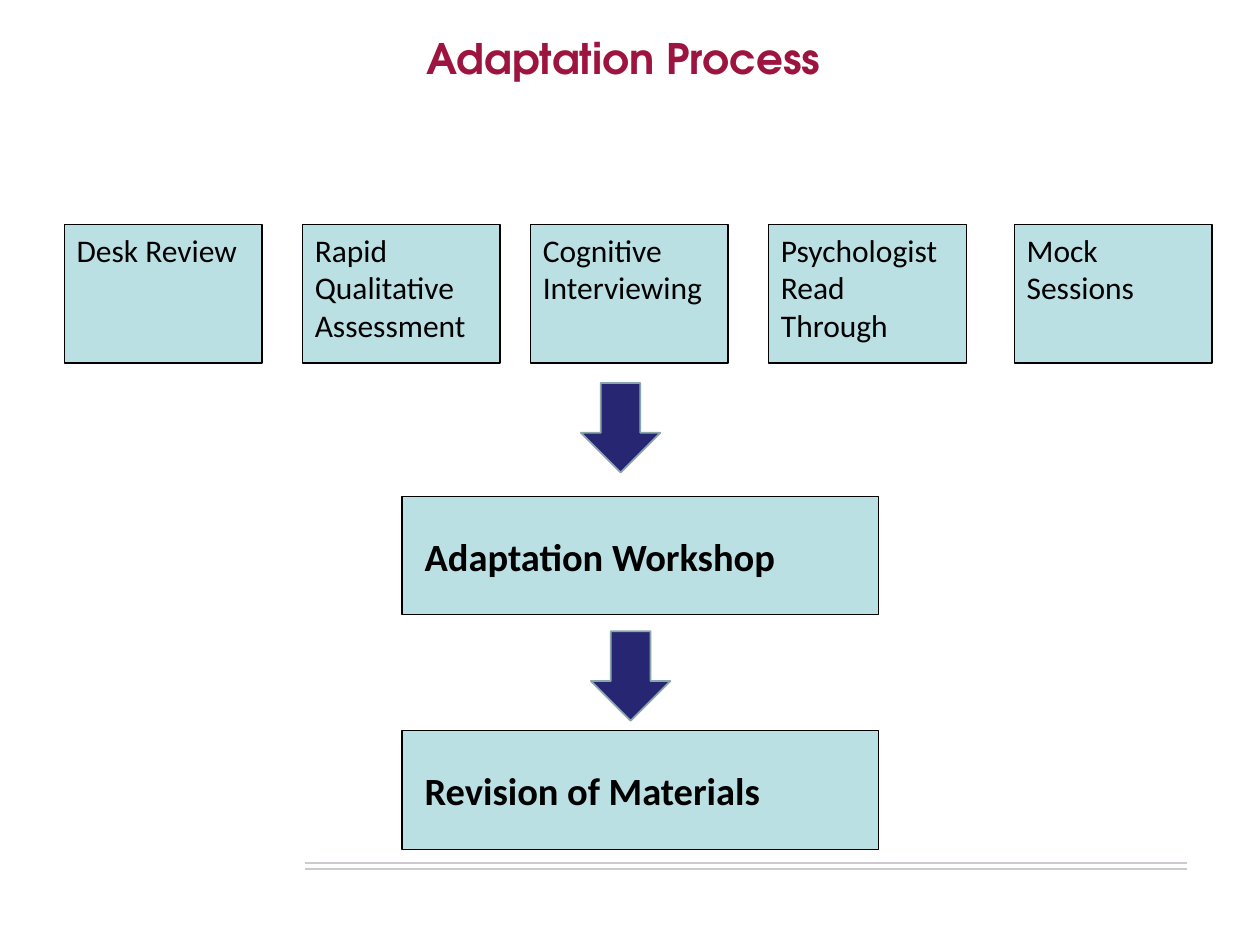
from dataclasses import dataclass

import pptx
import pptx.dml.color
import pptx.enum.shapes
import pptx.enum.text
import pptx.oxml
import pptx.util

Pt = pptx.util.Pt
RGB = pptx.dml.color.RGBColor.from_string
SHAPE = pptx.enum.shapes.MSO_SHAPE
ANCHOR = pptx.enum.text.MSO_ANCHOR
ALIGN = pptx.enum.text.PP_ALIGN


@dataclass(frozen=True)
class Theme:
    title: str = "9E1440"
    text: str = "000000"
    box: str = "BBE0E3"
    arrow: str = "262673"
    arrow_line: str = "8AA6A8"
    rule: str = "CEC9CE"
    title_font: str = "TeX Gyre Adventor"
    body_font: str = "Calibri"
    title_size: float = 24
    stage_size: float = 22
    input_size: float = 18


THEME = Theme()

INPUTS = [
    (36.7, "Desk Review"),
    (172.8, "Rapid Qualitative Assessment"),
    (303.1, "Cognitive Interviewing"),
    (439.2, "Psychologist Read Through"),
    (579.6, "Mock Sessions"),
]
STAGES = [(283.7, "Adaptation Workshop"), (417.6, "Revision of Materials")]
ARROWS = [(331.9, 218.9), (337.7, 360.7)]
RULES = [493.2, 496.8]


def write(sp, text, frame, font, color):
    """Put one left-aligned paragraph in a shape, with its frame and font formats."""
    tf = sp.text_frame
    for name, value in frame.items():
        setattr(tf, name, value)
    p = tf.paragraphs[0]
    p.alignment = ALIGN.LEFT
    r = p.add_run()
    r.text = text
    for name, value in font.items():
        setattr(r.font, name, value)
    r.font.color.rgb = RGB(color)


def add_filled(s, kind, box, fill, line, width):
    sp = s.shapes.add_shape(kind, *map(Pt, box))
    sp.shadow.inherit = False
    sp.fill.solid()
    sp.fill.fore_color.rgb = RGB(fill)
    sp.line.color.rgb = RGB(line)
    sp.line.width = Pt(width)
    return sp


def add_title(s, box, text):
    sp = s.shapes.title
    sp.left, sp.top, sp.width, sp.height = map(Pt, box)
    frame = {"word_wrap": True, "vertical_anchor": ANCHOR.TOP, "margin_left": Pt(14),
             "auto_size": pptx.enum.text.MSO_AUTO_SIZE.NONE}
    font = {"name": THEME.title_font, "size": Pt(THEME.title_size), "bold": True}
    write(sp, text, frame, font, THEME.title)


def add_input(s, box, text):
    sp = add_filled(s, SHAPE.RECTANGLE, box, THEME.box, THEME.text, 0.75)
    frame = {"word_wrap": True, "vertical_anchor": ANCHOR.TOP}
    font = {"name": THEME.body_font, "size": Pt(THEME.input_size)}
    write(sp, text, frame, font, THEME.text)


def add_stage(s, box, text):
    sp = add_filled(s, SHAPE.RECTANGLE, box, THEME.box, THEME.text, 0.75)
    frame = {"word_wrap": True, "vertical_anchor": ANCHOR.MIDDLE, "margin_left": Pt(13)}
    font = {"name": THEME.body_font, "size": Pt(THEME.stage_size), "bold": True}
    write(sp, text, frame, font, THEME.text)


def add_arrow(s, box):
    add_filled(s, SHAPE.DOWN_ARROW, box, THEME.arrow, THEME.arrow_line, 1)


def add_rule(s, left, right, y):
    line = s.shapes.add_connector(
        pptx.enum.shapes.MSO_CONNECTOR.STRAIGHT, Pt(left), Pt(y), Pt(right), Pt(y))
    line.line.color.rgb = RGB(THEME.rule)
    line.line.width = Pt(1.25)
    line._element.spPr.append(pptx.oxml.parse_xml(
        '<a:effectLst xmlns:a="http://schemas.openxmlformats.org/drawingml/2006/main"/>'))


def build_process(s):
    for y in RULES:
        add_rule(s, 174.2, 678.2, y)
    add_title(s, (229.7, 15.1, 620.6, 72.7), "Adaptation Process")
    for left, text in INPUTS:
        add_input(s, (left, 128.2, 113, 79.2), text)
    for left, top in ARROWS:
        add_arrow(s, (left, top, 45.4, 51.1))
    for top, text in STAGES:
        add_stage(s, (229.7, top, 272.2, 67.7), text)


def main():
    prs = pptx.Presentation()
    prs.slide_width, prs.slide_height = Pt(720), Pt(540)
    s = prs.slides.add_slide(prs.slide_layouts.get_by_name("Title Only"))
    build_process(s)
    prs.save("out.pptx")


if __name__ == "__main__":
    main()
